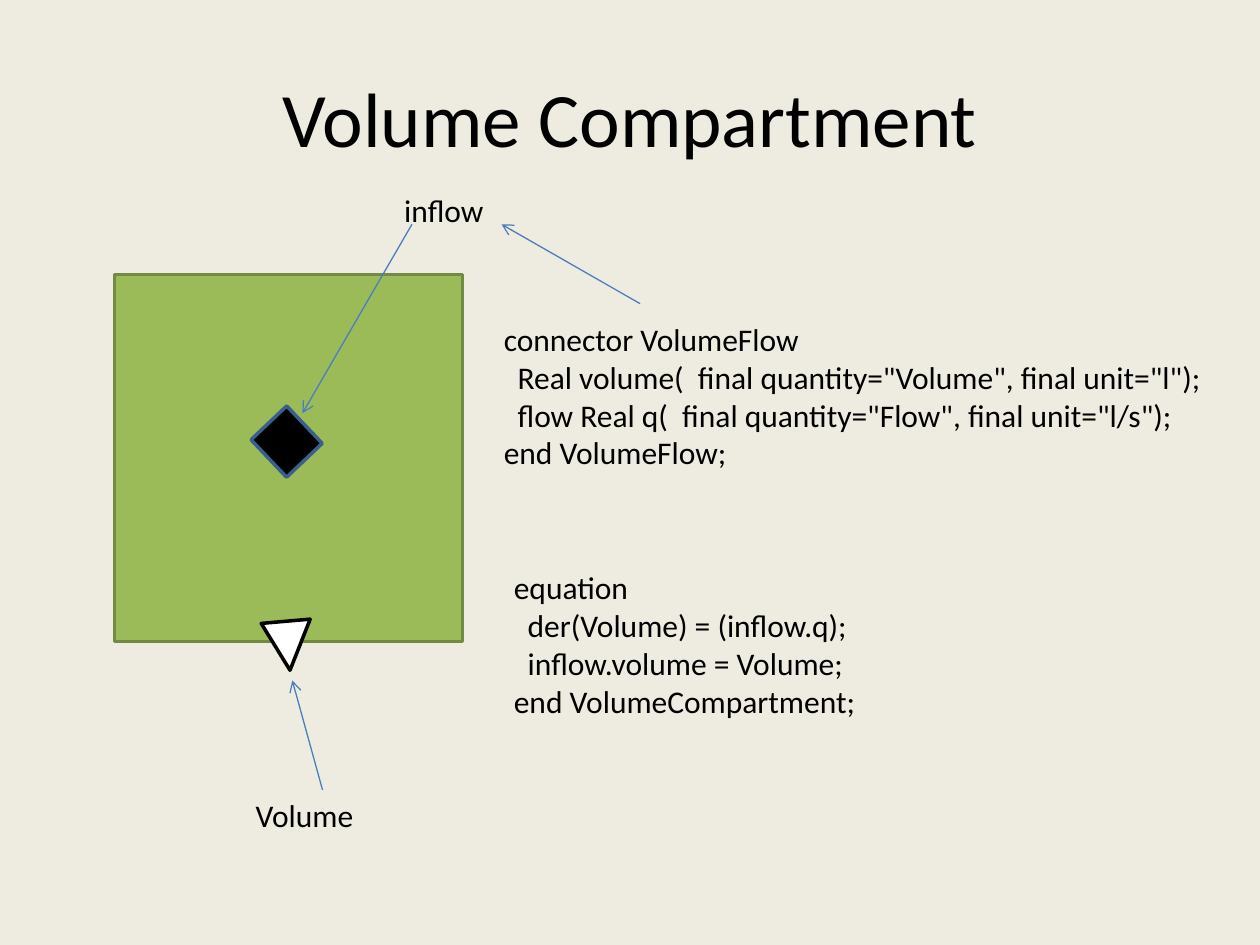
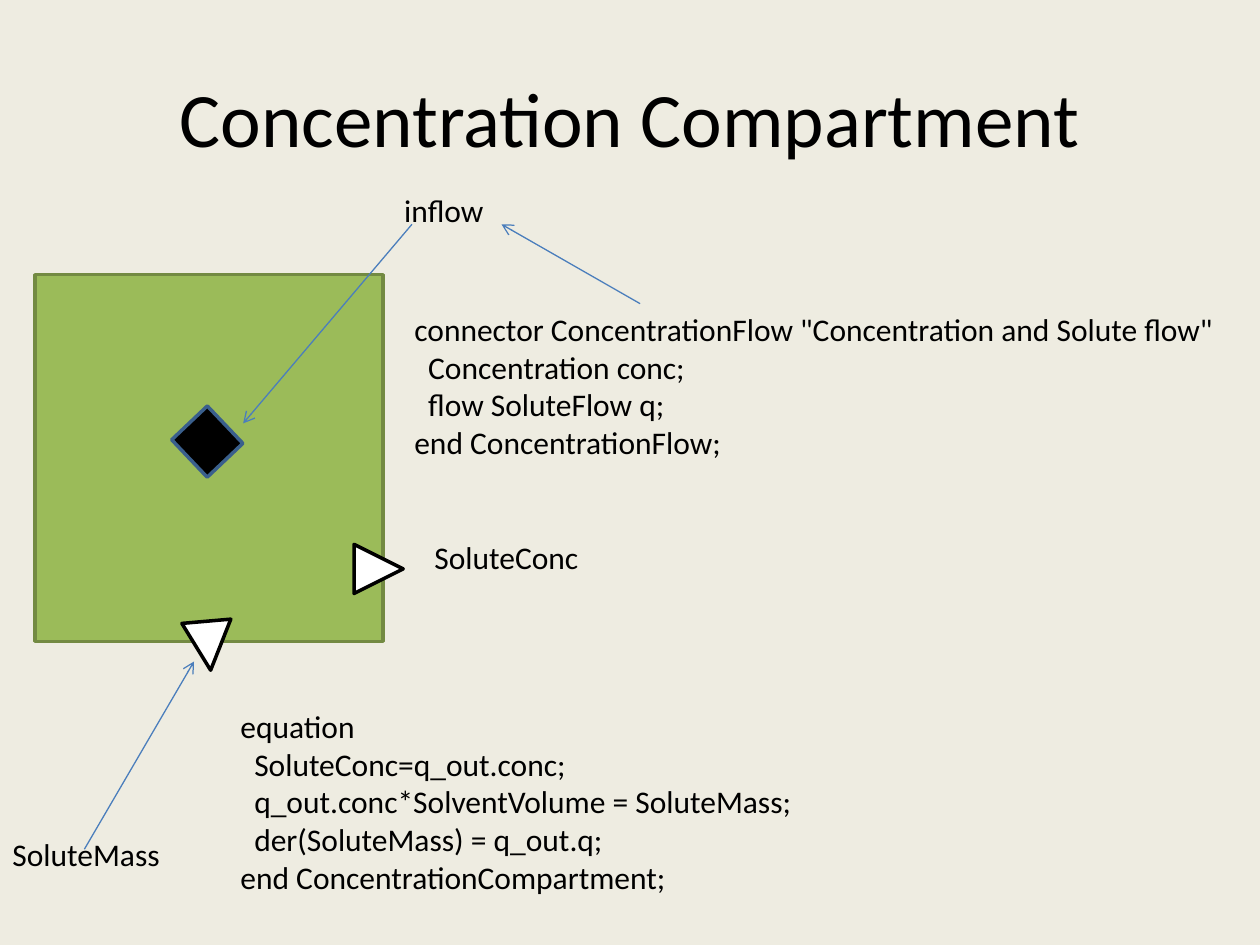
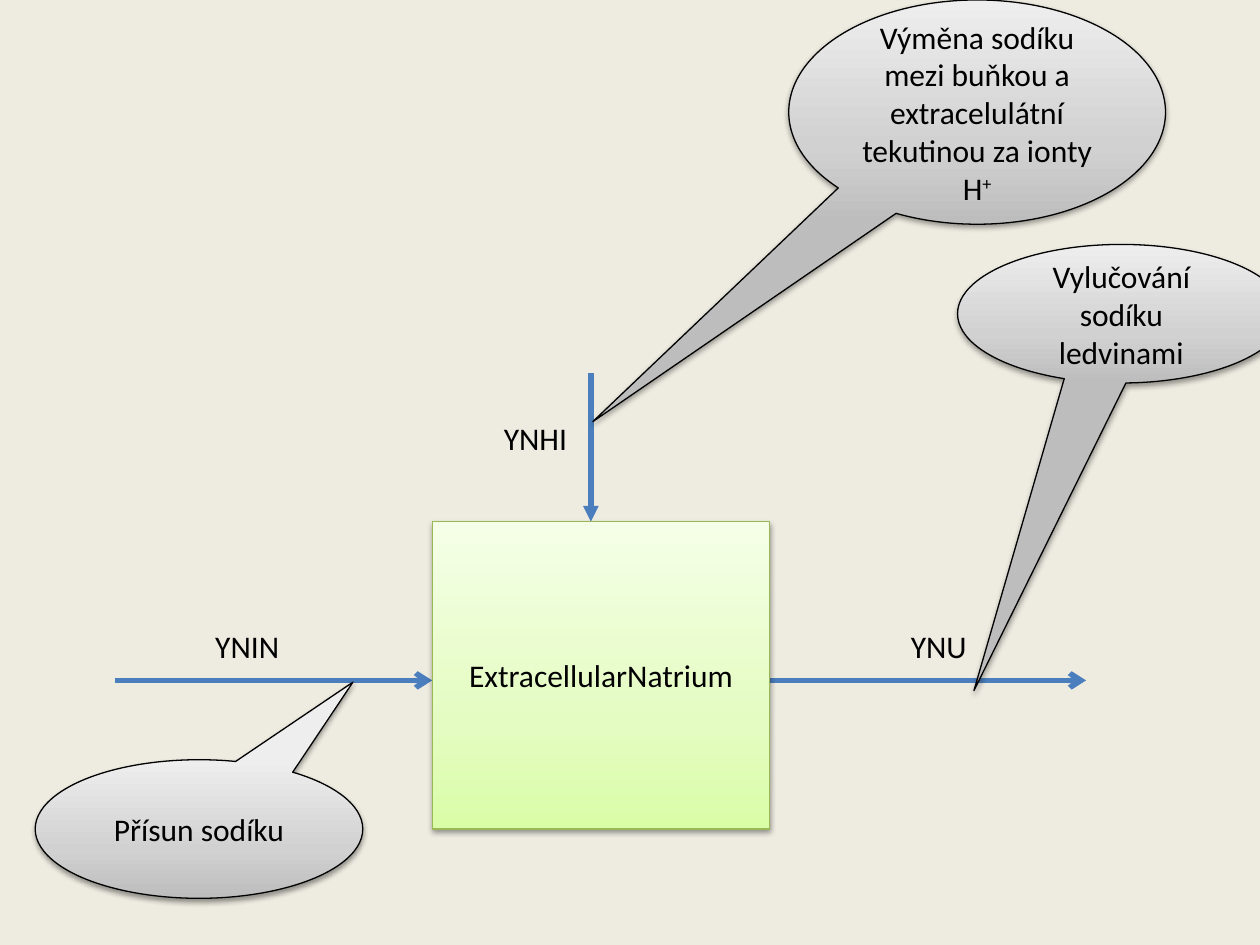
"""Build three slides on volume, concentration and sodium compartments."""
from copy import deepcopy

from lxml import etree
from pptx import Presentation
from pptx.dml.color import RGBColor
from pptx.enum import dml, shapes, text
from pptx.oxml import ns
from pptx.util import Inches, Pt

BACKGROUND = RGBColor(0xEE, 0xEC, 0xE1)
BLACK = RGBColor(0, 0, 0)
WHITE = RGBColor(0xFF, 0xFF, 0xFF)
GREEN = RGBColor(0x9B, 0xBB, 0x59)
GREEN_EDGE = RGBColor(0x73, 0x8A, 0x42)
PORT_EDGE = RGBColor(0x3A, 0x5F, 0x8C)
ARROW_BLUE = RGBColor(0x4B, 0x7E, 0xBC)
POOL_EDGE = RGBColor(0x98, 0xB9, 0x55)
POOL_STOPS = [(0, RGBColor(0xDA, 0xFD, 0xA7)), (0.35, RGBColor(0xE4, 0xFC, 0xC2)),
              (1, RGBColor(0xF5, 0xFF, 0xE7))]
GREY_STOPS = [(0, RGBColor(0xBD, 0xBD, 0xBD)), (0.35, RGBColor(0xD1, 0xD1, 0xD1)),
              (1, RGBColor(0xEE, 0xEE, 0xEE))]
FONT = "Calibri"
CODE_INDENT = Inches(0.11)
RECT = shapes.MSO_SHAPE.RECTANGLE
TRIANGLE = shapes.MSO_SHAPE.ISOSCELES_TRIANGLE
CALLOUT = shapes.MSO_SHAPE.OVAL_CALLOUT


def write(tf, content, size=18, align=text.PP_ALIGN.LEFT, anchor=text.MSO_ANCHOR.TOP,
          wrap=True, grow=False, superscript=""):
    """Fill a text frame line by line, indenting lines that start with a tab."""
    tf.word_wrap = wrap
    tf.vertical_anchor = anchor
    tf.auto_size = text.MSO_AUTO_SIZE.SHAPE_TO_FIT_TEXT if grow else text.MSO_AUTO_SIZE.NONE
    for i, line in enumerate(content.split("\n")):
        p = tf.add_paragraph() if i else tf.paragraphs[0]
        p.alignment = align
        if line.startswith("\t"):
            p._p.get_or_add_pPr().set("marL", str(CODE_INDENT))
        p.add_run().text = line.strip()
    if superscript:
        r = p.add_run()
        r.text = superscript
        r.font._element.set("baseline", "30000")
    for p in tf.paragraphs:
        for r in p.runs:
            r.font.name = FONT
            r.font.size = Pt(size)
            r.font.color.rgb = BLACK


def add_arrow(slide, x1, y1, x2, y2, width=0.75, head="arrow"):
    """Draw a straight blue arrow pointing at its second end."""
    cx = slide.shapes.add_connector(shapes.MSO_CONNECTOR.STRAIGHT,
                                    Inches(x1), Inches(y1), Inches(x2), Inches(y2))
    cx.line.color.rgb = ARROW_BLUE
    cx.line.width = Pt(width)
    etree.SubElement(cx.line._get_or_add_ln(), ns.qn("a:tailEnd"), type=head)
    etree.SubElement(cx._element.spPr, ns.qn("a:effectLst"))


prs = Presentation()
prs.slide_width, prs.slide_height = Inches(10), Inches(7.5)
fill = prs.slide_master.background.fill
fill.solid()
fill.fore_color.rgb = BACKGROUND

compartments = [
    {
        "title": "Volume Compartment",
        "left": 0.91,
        "code": [
            (3.9, 2.49, 5.94, 1.31,
             "connector VolumeFlow\n"
             "\tReal volume(  final quantity=\"Volume\", final unit=\"l\");\n"
             "\tflow Real q(  final quantity=\"Flow\", final unit=\"l/s\");\n"
             "end VolumeFlow;"),
            (3.98, 4.46, 6.02, 1.31,
             "equation\n\tder(Volume) = (inflow.q);\n"
             "\tinflow.volume = Volume;\nend VolumeCompartment;"),
        ],
        "labels": [(1.93, 6.27, 0.99, "Volume")],
        "outputs": [],
        "arrows": [(3.27, 1.78, 2.4, 3.28), (2.56, 6.27, 2.32, 5.4)],
    },
    {
        "title": "Concentration Compartment",
        "left": 0.28,
        "code": [
            (3.19, 2.41, 6.85, 1.31,
             "connector ConcentrationFlow \"Concentration and Solute flow\"\n"
             "\tConcentration conc;\n\tflow SoluteFlow q;\nend ConcentrationFlow;"),
            (1.81, 5.56, 8.19, 1.62,
             "equation\n\tSoluteConc=q_out.conc;\n"
             "\tq_out.conc*SolventVolume = SoluteMass;\n"
             "\tder(SoluteMass) = q_out.q;\nend ConcentrationCompartment;"),
        ],
        "labels": [(0, 6.58, 1.38, "SoluteMass"), (3.35, 4.22, 1.36, "SoluteConc")],
        "outputs": [(TRIANGLE, 2.81, 4.32, 0.39, 0.39, 90, WHITE, BLACK)],
        "arrows": [(3.27, 1.78, 1.93, 3.36), (0.67, 6.74, 1.54, 5.25)],
    },
]

for comp in compartments:
    slide = prs.slides.add_slide(prs.slide_layouts[5])
    title = slide.shapes.title
    title.left, title.top, title.width, title.height = map(Inches, (0.5, 0.3, 9, 1.25))
    write(title.text_frame, comp["title"], size=44, align=text.PP_ALIGN.CENTER,
          anchor=text.MSO_ANCHOR.MIDDLE)

    for x, y, w, h, code in comp["code"]:
        tb = slide.shapes.add_textbox(Inches(x), Inches(y), Inches(w), Inches(h))
        write(tb.text_frame, code, grow=True)

    left = comp["left"]
    parts = [
        (RECT, left, 2.18, 2.76, 2.91, 0, GREEN, GREEN_EDGE),
        (RECT, left + 1.16, 3.31, 0.41, 0.39, 46.5, BLACK, PORT_EDGE),
        (TRIANGLE, left + 1.18, 4.93, 0.39, 0.39, 175, WHITE, BLACK),
    ]
    for kind, x, y, w, h, turn, color, edge in parts + comp["outputs"]:
        sp = slide.shapes.add_shape(kind, Inches(x), Inches(y), Inches(w), Inches(h))
        sp.rotation = turn
        sp.shadow.inherit = False
        sp.fill.solid()
        sp.fill.fore_color.rgb = color
        sp.line.color.rgb = edge
        sp.line.width = Pt(2)

    for ends in comp["arrows"] + [(5.08, 2.41, 3.98, 1.78)]:
        add_arrow(slide, *ends)

    for x, y, w, label in comp["labels"] + [(3.11, 1.47, 0.84, "inflow")]:
        tb = slide.shapes.add_textbox(Inches(x), Inches(y), Inches(w), Inches(0.4))
        write(tb.text_frame, label, wrap=False, grow=True)

slide = prs.slides.add_slide(prs.slide_layouts[6])

flows = [
    (6.1, 5.4, 8.62, 5.4, "arrow"),
    (0.91, 5.4, 3.43, 5.4, "arrow"),
    (4.69, 2.96, 4.69, 4.14, "triangle"),
]
for x1, y1, x2, y2, head in flows:
    add_arrow(slide, x1, y1, x2, y2, width=3, head=head)

for x, y, w, label in [(1.61, 4.93, 0.71, "YNIN"), (7.13, 4.93, 0.65, "YNU"),
                       (3.9, 3.28, 0.71, "YNHI")]:
    tb = slide.shapes.add_textbox(Inches(x), Inches(y), Inches(w), Inches(0.4))
    write(tb.text_frame, label, wrap=False, grow=True)

bubbles = [
    (RECT, 3.43, 4.14, 2.68, 2.44, (), POOL_STOPS, POOL_EDGE, "ExtracellularNatrium", ""),
    (CALLOUT, 0.28, 6.03, 2.6, 1.1, (0.47, -1.06), GREY_STOPS, BLACK, "Přísun sodíku", ""),
    (CALLOUT, 7.6, 1.94, 2.6, 1.1, (-0.45, 2.72), GREY_STOPS, BLACK,
     "Vylučování sodíku ledvinami", ""),
    (CALLOUT, 6.26, 0, 2.99, 1.78, (-1.02, 1.38), GREY_STOPS, BLACK,
     "Výměna sodíku mezi buňkou a extracelulátní tekutinou za ionty H", "+"),
]
for kind, x, y, w, h, tip, stops, edge, label, superscript in bubbles:
    sp = slide.shapes.add_shape(kind, Inches(x), Inches(y), Inches(w), Inches(h))
    for i, value in enumerate(tip):
        sp.adjustments[i] = value
    sp.fill.gradient()
    sp.fill.gradient_angle = 90
    gs_list = sp._element.spPr.find(".//" + ns.qn("a:gsLst"))
    gs_list.insert(1, deepcopy(gs_list[0]))
    for stop, (position, color) in zip(sp.fill.gradient_stops, stops):
        stop.position = position
        stop.color.rgb = color
    sp.line.color.rgb = edge
    sp.line.width = Pt(0.75)
    sp.shadow.inherit = False
    effects = sp._element.spPr.find(ns.qn("a:effectLst"))
    shadow = etree.SubElement(effects, ns.qn("a:outerShdw"), blurRad=str(Pt(3.1)),
                              dist=str(Pt(1.6)), dir="5400000", rotWithShape="0")
    shade = etree.SubElement(shadow, ns.qn("a:srgbClr"), val=str(BLACK))
    etree.SubElement(shade, ns.qn("a:alpha"), val="38000")
    write(sp.text_frame, label, align=text.PP_ALIGN.CENTER,
          anchor=text.MSO_ANCHOR.MIDDLE, superscript=superscript)

prs.save("out.pptx")
